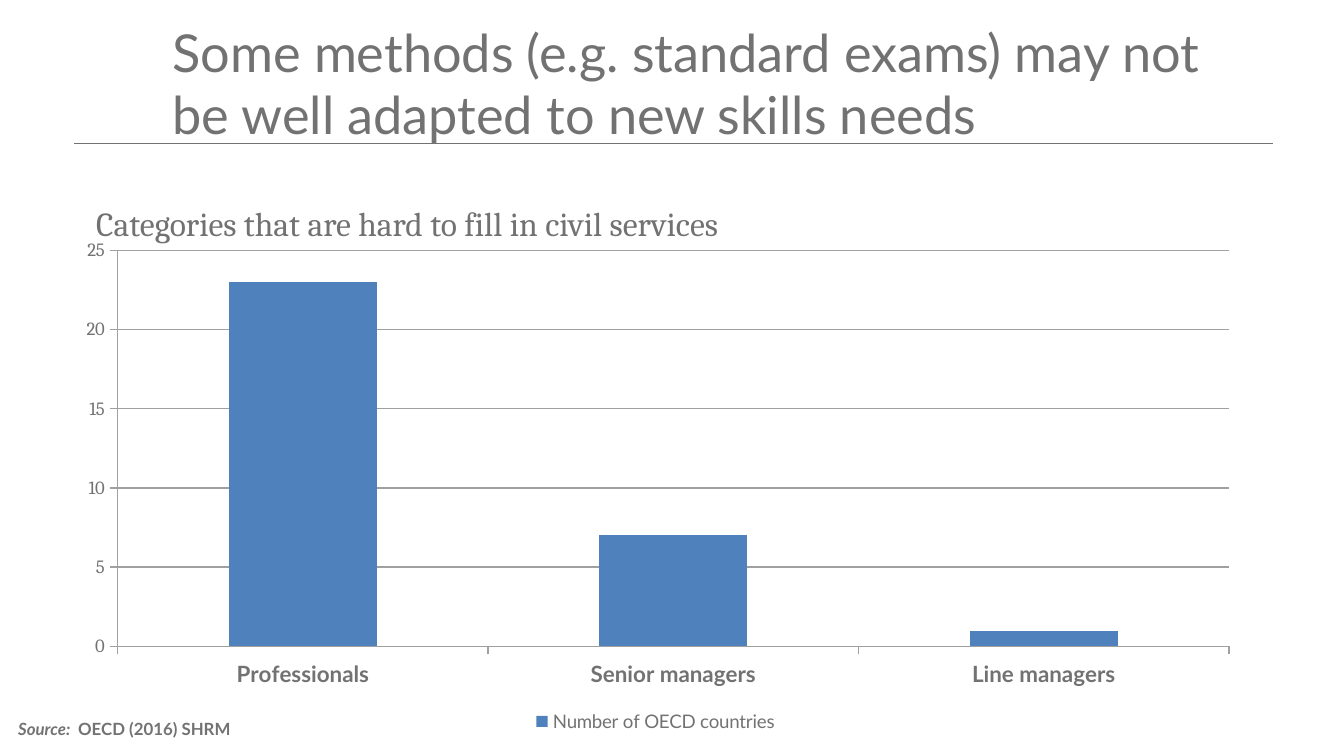
from dataclasses import dataclass

from lxml import etree
from pptx import Presentation
from pptx import util as u
from pptx.chart.data import CategoryChartData
from pptx.dml.color import RGBColor
from pptx.enum import chart as c, shapes, text
from pptx.oxml import parse_xml
from pptx.oxml.ns import nsdecls, qn

EMU_PER_PX = 914400 / 134.4


@dataclass(frozen=True)
class Theme:
    grey: RGBColor = RGBColor(0x72, 0x72, 0x72)
    axis: RGBColor = RGBColor(0xA0, 0xA0, 0xA0)
    bar: RGBColor = RGBColor(0x4F, 0x81, 0xBD)
    sans: str = "Lato"
    serif: str = "Cambria"
    title: int = 28
    heading: int = 18
    category: int = 12
    chart: int = 10
    source: int = 9


THEME = Theme()


def px(*lengths):
    return [u.Emu(round(length * EMU_PER_PX)) for length in lengths]


def style_font(font, name, size, bold=False, italic=False):
    font.name = name
    font.size = u.Pt(size)
    font.bold = bold
    font.italic = italic
    font.color.rgb = THEME.grey


def add_run(paragraph, words, name, size, bold=False, italic=False):
    run = paragraph.add_run()
    run.text = words
    style_font(run.font, name, size, bold, italic)


def set_title(slide, box, words):
    title = slide.shapes.title
    title.left, title.top, title.width, title.height = px(*box)
    frame = title.text_frame
    frame.word_wrap = True
    frame.auto_size = text.MSO_AUTO_SIZE.NONE
    frame.vertical_anchor = text.MSO_ANCHOR.MIDDLE
    paragraph = frame.paragraphs[0]
    paragraph.alignment = text.PP_ALIGN.LEFT
    add_run(paragraph, words, THEME.sans, THEME.title)


def add_rule(slide, left, right, y):
    rule = slide.shapes.add_connector(
        shapes.MSO_CONNECTOR.STRAIGHT, *px(left, y, right, y))
    rule.line.color.rgb = THEME.grey
    rule.line.width = u.Pt(0.5)
    etree.SubElement(rule._element.spPr, qn("a:effectLst"))


def add_label(slide, box):
    frame = slide.shapes.add_textbox(*px(*box)).text_frame
    frame.word_wrap = True
    frame.auto_size = text.MSO_AUTO_SIZE.SHAPE_TO_FIT_TEXT
    return frame.paragraphs[0]


def style_line(line):
    line.color.rgb = THEME.axis
    line.width = u.Pt(0.75)


def place_plot(chart, x, y, width, height):
    area = chart._chartSpace.chart.plotArea
    for layout in area.findall(qn("c:layout")):
        area.remove(layout)
    area.insert(0, parse_xml(
        f'<c:layout {nsdecls("c")}><c:manualLayout>'
        '<c:layoutTarget val="inner"/><c:xMode val="edge"/><c:yMode val="edge"/>'
        f'<c:x val="{x}"/><c:y val="{y}"/><c:w val="{width}"/><c:h val="{height}"/>'
        '</c:manualLayout></c:layout>'))


def add_column_chart(slide, box, name, values):
    data = CategoryChartData()
    data.categories = list(values)
    data.add_series(name, list(values.values()))
    chart = slide.shapes.add_chart(
        c.XL_CHART_TYPE.COLUMN_CLUSTERED, *px(*box), data).chart
    style_font(chart.font, THEME.serif, THEME.chart)
    chart.has_title = False
    chart.has_legend = True
    chart.legend.position = c.XL_LEGEND_POSITION.BOTTOM
    chart.legend.include_in_layout = False
    style_font(chart.legend.font, THEME.sans, THEME.chart)

    plot = chart.plots[0]
    plot.gap_width = 150
    plot.vary_by_categories = False
    series = plot.series[0]
    series.format.fill.solid()
    series.format.fill.fore_color.rgb = THEME.bar

    for axis in (chart.category_axis, chart.value_axis):
        axis.major_tick_mark = c.XL_TICK_MARK.OUTSIDE
        style_line(axis.format.line)
    style_font(chart.category_axis.tick_labels.font, THEME.sans, THEME.category, bold=True)
    value_axis = chart.value_axis
    value_axis.minimum_scale, value_axis.maximum_scale = 0, 25
    value_axis.major_unit = 5
    value_axis.has_major_gridlines = True
    style_line(value_axis.major_gridlines.format.line)
    place_plot(chart, 0.05, 0.04, 0.93, 0.78)


def main():
    presentation = Presentation()
    presentation.slide_width, presentation.slide_height = px(1344, 756)
    slide = presentation.slides.add_slide(presentation.slide_layouts[5])

    add_rule(slide, 74, 1273, 144)
    set_title(slide, (159, 26, 1090, 113),
              "Some methods (e.g. standard exams) may not be well adapted to new skills needs")
    add_column_chart(slide, (58, 230, 1195, 508), "Number of OECD countries",
                     {"Professionals": 23, "Senior managers": 7, "Line managers": 1})

    source = add_label(slide, (5, 712, 1122, 34))
    add_run(source, "Source: ", THEME.sans, THEME.source, bold=True, italic=True)
    add_run(source, " OECD (2016) SHRM", THEME.sans, THEME.source, bold=True)

    heading = add_label(slide, (83, 196, 1259, 54))
    add_run(heading, "Categories that are hard to fill in civil services",
            THEME.serif, THEME.heading)

    presentation.save("out.pptx")


if __name__ == "__main__":
    main()
